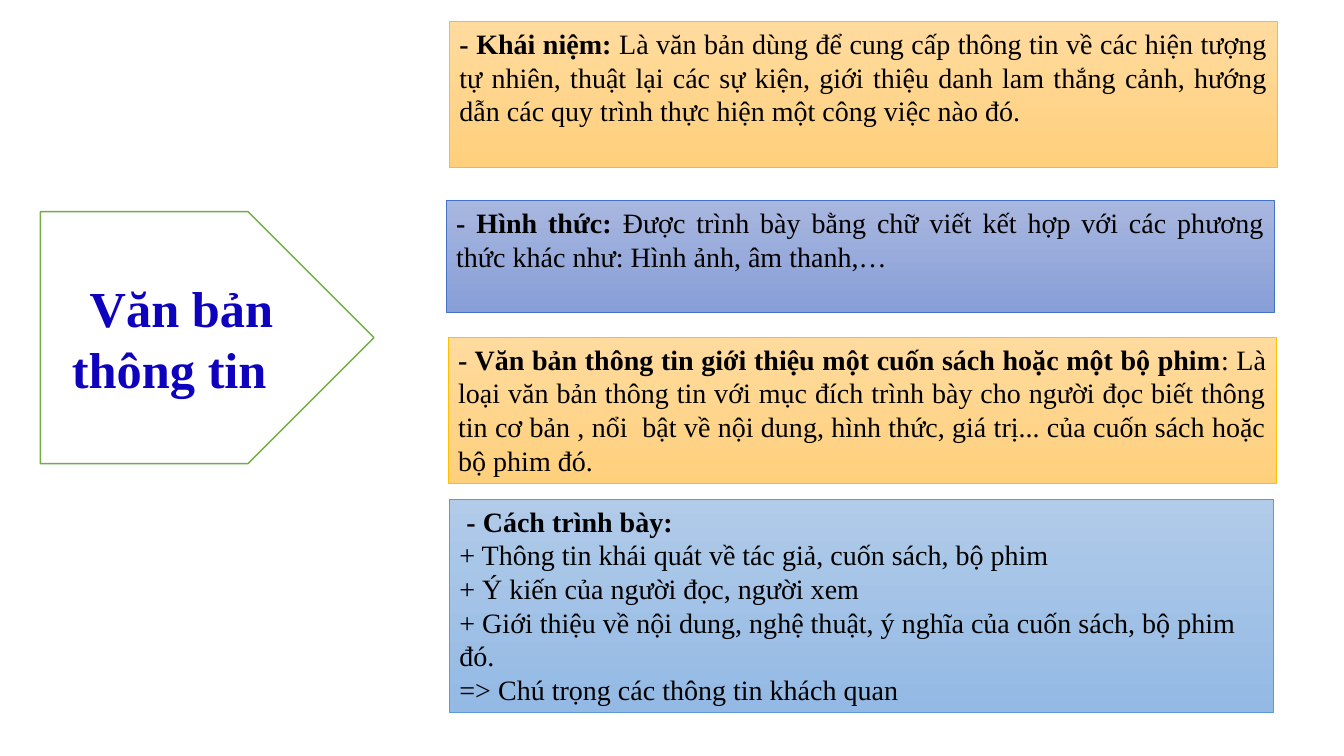
from pptx import Presentation
from pptx.dml.color import RGBColor
from pptx.enum import shapes, text
from pptx.util import Pt

FONT = "Times New Roman"
COLORS = {
    "text": "000000", "topic": "0F02BE", "white": "FFFFFF", "green": "70AD47",
    "gold_top": "FFDB9E", "gold_end": "FFD07C", "gold_line": "FFC000",
    "indigo_top": "A8B7DF", "indigo_end": "889ED7", "indigo_line": "4472C4",
    "blue_top": "B1CBE9", "blue_end": "93B9E4", "blue_line": "5B9BD5",
}


def rgb(name):
    return RGBColor.from_string(COLORS[name])


def add_run(p, content, size, color, bold):
    r = p.add_run()
    r.text = content
    r.font.name = FONT
    r.font.size = Pt(size)
    r.font.bold = bold
    r.font.color.rgb = rgb(color)


prs = Presentation()
prs.slide_width, prs.slide_height = Pt(960), Pt(540)
s = prs.slides.add_slide(prs.slide_layouts[6])

# Description boxes: position, palette, alignment, paragraphs of (text, bold) runs
JUSTIFY, LEFT = text.PP_ALIGN.JUSTIFY, text.PP_ALIGN.LEFT
boxes = [
    ((321.1, 15.3, 591.2, 104.4), "gold", JUSTIFY, [
        [("- Khái niệm:", True),
         (" Là văn bản dùng để cung cấp thông tin về các hiện tượng tự nhiên, "
          "thuật lại các sự kiện, giới thiệu danh lam thắng cảnh, hướng dẫn các "
          "quy trình thực hiện một công việc nào đó. ", False)]]),
    ((318.8, 143.2, 591.2, 80), "indigo", JUSTIFY, [
        [("- Hình thức: ", True),
         ("Được trình bày bằng chữ viết kết hợp với các phương thức khác như: "
          "Hình ảnh, âm thanh,…", False)]]),
    ((320.2, 241, 591.2, 104.4), "gold", JUSTIFY, [
        [("- Văn bản thông tin giới thiệu một cuốn sách hoặc một bộ phim", True),
         (": Là loại văn bản thông tin với mục đích trình bày cho người đọc biết "
          "thông tin cơ bản , nổi  bật về nội dung, hình thức, giá trị... của "
          "cuốn sách hoặc bộ phim đó.", False)]]),
    ((321.1, 356.6, 588.5, 152.6), "blue", LEFT, [
        [(" - Cách trình bày:", True)],
        [("+ Thông tin khái quát về tác giả, cuốn sách, bộ phim", False)],
        [("+ Ý kiến của người đọc, người xem", False)],
        [("+ Giới thiệu về nội dung, nghệ thuật, ý nghĩa của cuốn sách, "
          "bộ phim đó.", False)],
        [("=> Chú trọng các thông tin khách quan", False)]]),
]
for place, palette, align, paragraphs in boxes:
    sp = s.shapes.add_shape(shapes.MSO_SHAPE.RECTANGLE, *map(Pt, place))
    sp.shadow.inherit = False
    sp.fill.gradient()
    sp.fill.gradient_angle = 270
    for stop, end, position in zip(sp.fill.gradient_stops, ("top", "end"), (0, 1)):
        stop.color.rgb = rgb(f"{palette}_{end}")
        stop.position = position
    sp.line.color.rgb = rgb(f"{palette}_line")
    sp.line.width = Pt(0.5)
    tf = sp.text_frame
    tf.word_wrap = True
    tf.vertical_anchor = text.MSO_ANCHOR.TOP
    for i, runs in enumerate(paragraphs):
        p = tf.add_paragraph() if i else tf.paragraphs[0]
        p.alignment = align
        for content, bold in runs:
            add_run(p, content, 20, "text", bold)

# Topic arrow
sp = s.shapes.add_shape(shapes.MSO_SHAPE.PENTAGON, Pt(28.8), Pt(151.2), Pt(238.3), Pt(180))
sp.shadow.inherit = False
sp.fill.solid()
sp.fill.fore_color.rgb = rgb("white")
sp.line.color.rgb = rgb("green")
sp.line.width = Pt(1)
tf = sp.text_frame
tf.word_wrap = True
tf.vertical_anchor = text.MSO_ANCHOR.MIDDLE
p = tf.paragraphs[0]
p.alignment = text.PP_ALIGN.CENTER
add_run(p, " Văn bản thông tin ", 36, "topic", True)

prs.save("out.pptx")
